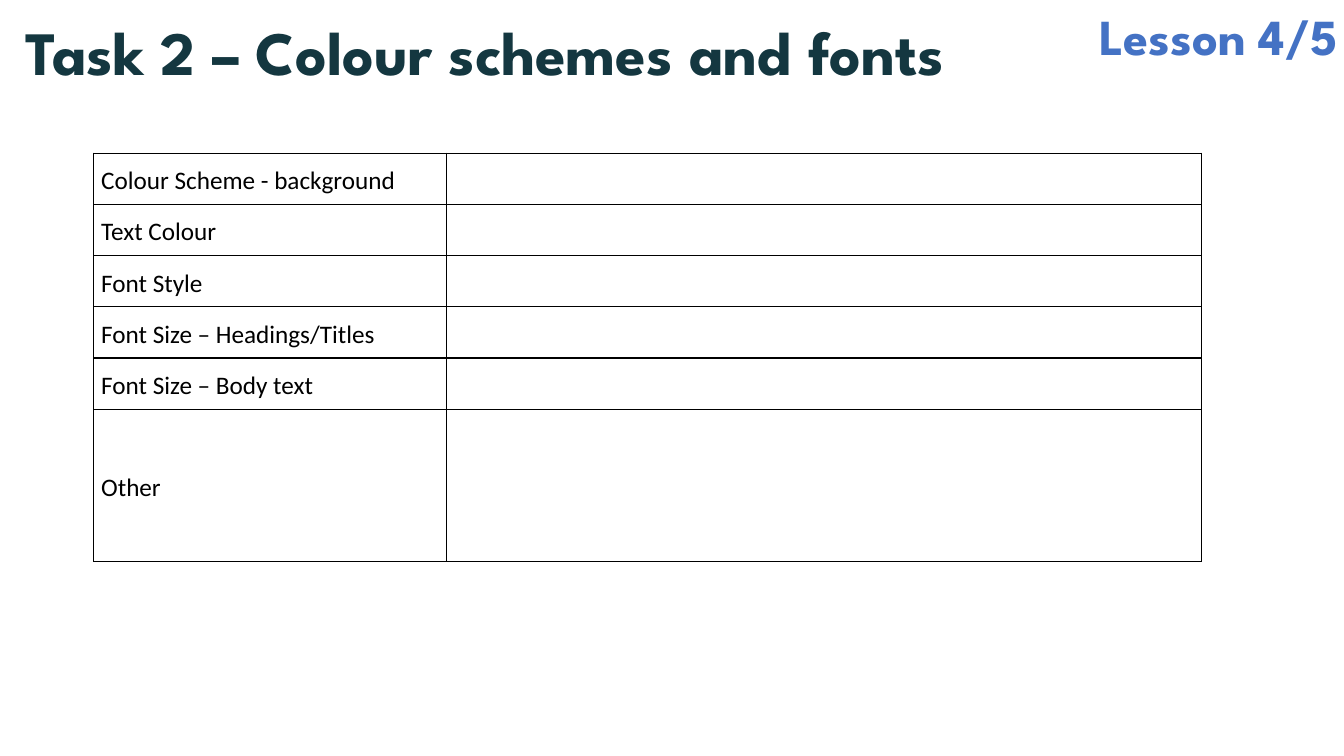
from dataclasses import dataclass

from lxml.etree import SubElement
from pptx import Presentation
from pptx.dml.color import RGBColor
from pptx.enum.text import MSO_ANCHOR, MSO_AUTO_SIZE, PP_ALIGN
from pptx.oxml.ns import qn
from pptx.util import Cm, Pt


@dataclass(frozen=True)
class Theme:
    heading_font: str = "League Spartan"
    body_font: str = "Calibri"
    title_color: str = "143740"
    lesson_color: str = "4472C4"
    ink: str = "000000"
    title_size: int = 44
    lesson_size: int = 36
    body_size: int = 18
    border_width: int = 1


class SlideBuilder:
    def __init__(self, slide, theme):
        self.slide = slide
        self.theme = theme

    def style(self, p, font, size, color, bold=False):
        p.font.name = font
        p.font.size = Pt(size)
        p.font.bold = bold
        p.font.color.rgb = RGBColor.from_string(color)

    def heading(self, text, box, size, color, align=PP_ALIGN.LEFT,
                anchor=MSO_ANCHOR.TOP, wrap=True):
        tf = self.slide.shapes.add_textbox(*map(Cm, box)).text_frame
        tf.word_wrap = wrap
        tf.auto_size = MSO_AUTO_SIZE.SHAPE_TO_FIT_TEXT
        tf.vertical_anchor = anchor
        p = tf.paragraphs[0]
        p.text = text
        p.alignment = align
        self.style(p, self.theme.heading_font, size, color, bold=True)

    def border(self, cell):
        tc_pr = cell._tc.get_or_add_tcPr()
        for index, side in enumerate(("lnL", "lnR", "lnT", "lnB")):
            ln = tc_pr.makeelement(qn(f"a:{side}"), w=str(Pt(self.theme.border_width)))
            fill = SubElement(ln, qn("a:solidFill"))
            SubElement(fill, qn("a:srgbClr"), val=self.theme.ink)
            tc_pr.insert(index, ln)

    def form_table(self, labels, left, top, widths, heights):
        frame = self.slide.shapes.add_table(
            len(labels), len(widths), Cm(left), Cm(top),
            Cm(sum(widths)), Cm(sum(heights)))
        table = frame.table
        table.first_row = table.horz_banding = False
        for column, width in zip(table.columns, widths):
            column.width = Cm(width)
        for row, height, label in zip(table.rows, heights, labels):
            row.height = Cm(height)
            for cell, text in zip(row.cells, (label, "")):
                cell.fill.background()
                self.border(cell)
                cell.vertical_anchor = MSO_ANCHOR.MIDDLE
                cell.margin_left = cell.margin_right = Cm(0.19)
                cell.margin_top = cell.margin_bottom = 0
                p = cell.text_frame.paragraphs[0]
                p.text = text
                p.line_spacing = 1.15
                self.style(p, self.theme.body_font, self.theme.body_size, self.theme.ink)


def main():
    prs = Presentation()
    prs.slide_width, prs.slide_height = Cm(33.87), Cm(19.05)
    theme = Theme()
    s = SlideBuilder(prs.slides.add_slide(prs.slide_layouts[6]), theme)

    # Form to fill in: the last row is taller for free notes
    labels = ["Colour Scheme - background", "Text Colour", "Font Style",
              "Font Size – Headings/Titles", "Font Size – Body text", "Other"]
    heights = [1.29] * (len(labels) - 1) + [3.84]
    s.form_table(labels, 2.36, 3.86, (8.89, 19.02), heights)

    # Title and lesson number
    s.heading("Task 2 – Colour schemes and fonts", (0.4, 0.2, 27.13, 2.14),
              theme.title_size, theme.title_color,
              anchor=MSO_ANCHOR.MIDDLE, wrap=False)
    s.heading("Lesson 4/5", (26.24, 0, 7.72, 1.8),
              theme.lesson_size, theme.lesson_color, align=PP_ALIGN.RIGHT)

    prs.save("out.pptx")


if __name__ == "__main__":
    main()
